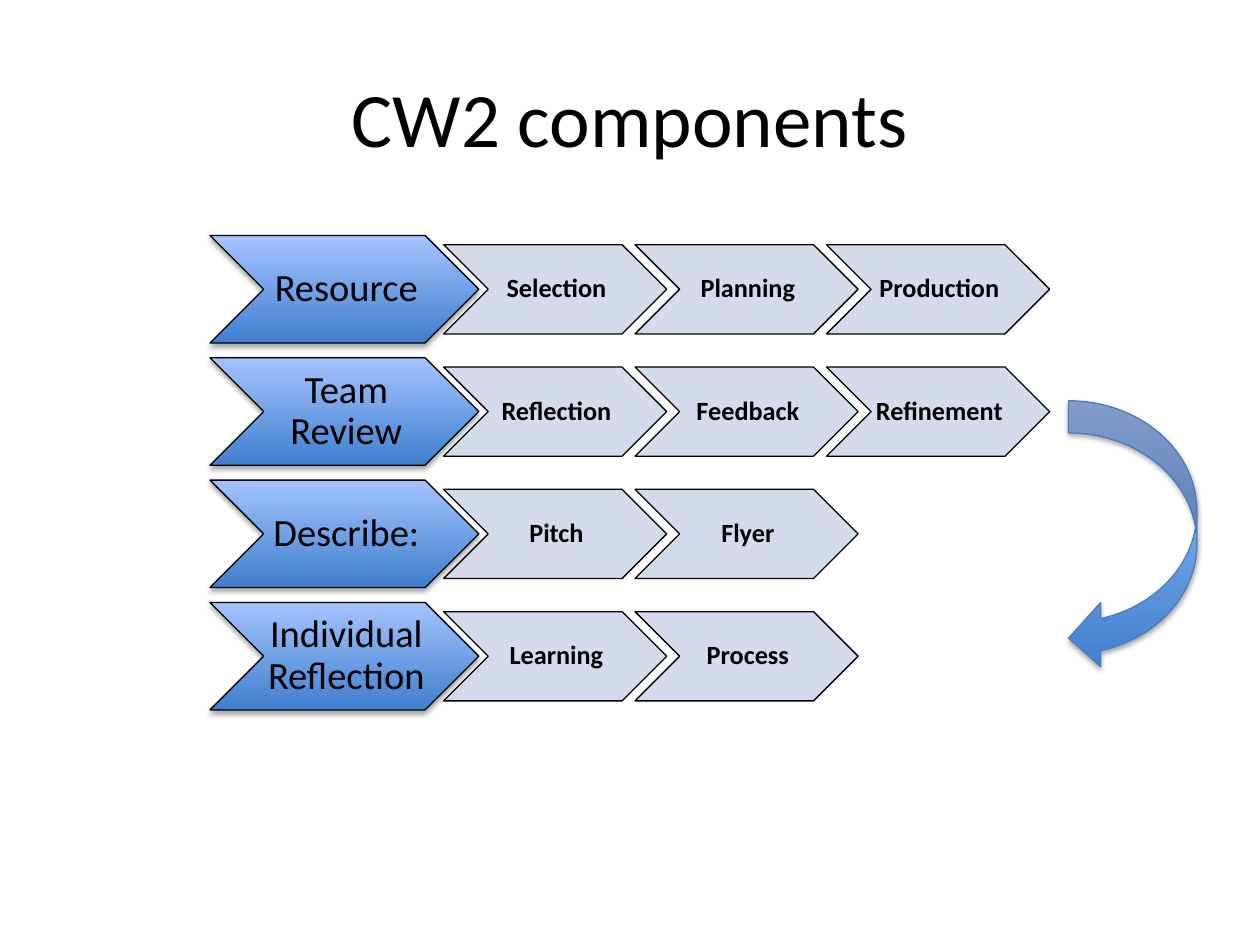
"""Build the CW2 components slide with its rows of chevron steps."""
import lxml.etree
import pptx
import pptx.dml.color
import pptx.enum.shapes
import pptx.enum.text
import pptx.oxml.ns
import pptx.util

Pt = pptx.util.Pt
qn = pptx.oxml.ns.qn
Shape = pptx.enum.shapes.MSO_SHAPE

ROWS = [
    ("Resource", ["Selection", "Planning", "Production"]),
    ("Team Review", ["Reflection", "Feedback", "Refinement"]),
    ("Describe:", ["Pitch", "Flyer"]),
    ("Individual Reflection", ["Learning", "Process"]),
]
ROW_LEFT, ROW_TOP, ROW_PITCH = 120, 134.6, 69.9
HEAD_WIDTH, HEAD_HEIGHT = 153.6, 61.4
STEP_LEFT, STEP_PITCH = 253.5, 109.4
STEP_WIDTH, STEP_HEIGHT = 127.5, 51


def color(hex_code):
    return pptx.dml.color.RGBColor.from_string(hex_code)


class SlideBuilder:
    font = "Calibri"
    ink = "000000"
    pale = "D0D8E8"
    gradient = ("3F7FCE", "A4C4FF")

    def __init__(self, slide):
        self.slide = slide

    def label(self, shape, text, size, bold=False, spacing=1.0, inset=None):
        frame = shape.text_frame
        frame.text = text
        frame.word_wrap = True
        frame.vertical_anchor = pptx.enum.text.MSO_ANCHOR.MIDDLE
        if inset is not None:
            frame.margin_left = Pt(2 * inset)
            frame.margin_top = frame.margin_bottom = Pt(inset)
            frame.margin_right = 0
        paragraph = frame.paragraphs[0]
        paragraph.alignment = pptx.enum.text.PP_ALIGN.CENTER
        paragraph.line_spacing = spacing
        font = paragraph.runs[0].font
        font.name, font.size, font.bold = self.font, Pt(size), bold
        font.color.rgb = color(self.ink)

    def title(self, text, left, top, width, height):
        box = self.slide.shapes.add_textbox(Pt(left), Pt(top), Pt(width), Pt(height))
        self.label(box, text, 44)

    def outline(self, kind, left, top, width, height, line):
        shape = self.slide.shapes.add_shape(kind, Pt(left), Pt(top), Pt(width), Pt(height))
        shape.shadow.inherit = False
        shape.line.color.rgb = color(line)
        shape.line.width = Pt(0.75)
        return shape

    def glossy(self, kind, left, top, width, height, line):
        shape = self.outline(kind, left, top, width, height, line)
        shape.fill.gradient()
        shape.fill.gradient_angle = 90
        for position, (stop, tone) in enumerate(zip(shape.fill.gradient_stops, self.gradient)):
            stop.color.rgb = color(tone)
            stop.position = position
        effects = shape._element.spPr.find(qn("a:effectLst"))
        shadow = lxml.etree.SubElement(
            effects, qn("a:outerShdw"), blurRad=str(Pt(3.1)), dist=str(Pt(1.8)),
            dir="5400000", rotWithShape="0")
        tint = lxml.etree.SubElement(shadow, qn("a:srgbClr"), val=self.ink)
        lxml.etree.SubElement(tint, qn("a:alpha"), val="35000")
        return shape

    def head(self, text, left, top):
        shape = self.glossy(Shape.CHEVRON, left, top, HEAD_WIDTH, HEAD_HEIGHT, self.ink)
        self.label(shape, text, 22, spacing=0.9, inset=1.1)

    def step(self, text, left, top):
        shape = self.outline(Shape.CHEVRON, left, top, STEP_WIDTH, STEP_HEIGHT, self.ink)
        shape.fill.solid()
        shape.fill.fore_color.rgb = color(self.pale)
        tint = shape._element.spPr.find(qn("a:solidFill")).find(qn("a:srgbClr"))
        lxml.etree.SubElement(tint, qn("a:alpha"), val="90000")
        self.label(shape, text, 15, bold=True, spacing=0.9, inset=0.75)


def main():
    presentation = pptx.Presentation()
    presentation.slide_width, presentation.slide_height = Pt(720), Pt(540)
    builder = SlideBuilder(presentation.slides.add_slide(presentation.slide_layouts[6]))
    for row, (heading, steps) in enumerate(ROWS):
        top = ROW_TOP + row * ROW_PITCH
        builder.head(heading, ROW_LEFT, top)
        for column, text in enumerate(steps):
            builder.step(text, STEP_LEFT + column * STEP_PITCH,
                         top + (HEAD_HEIGHT - STEP_HEIGHT) / 2)
    builder.title("CW2 components", 36, 21.6, 648, 90)
    builder.glossy(Shape.CURVED_LEFT_ARROW, 610.6, 229, 73.4, 154, "4B7EBC")
    presentation.save("out.pptx")


if __name__ == "__main__":
    main()
